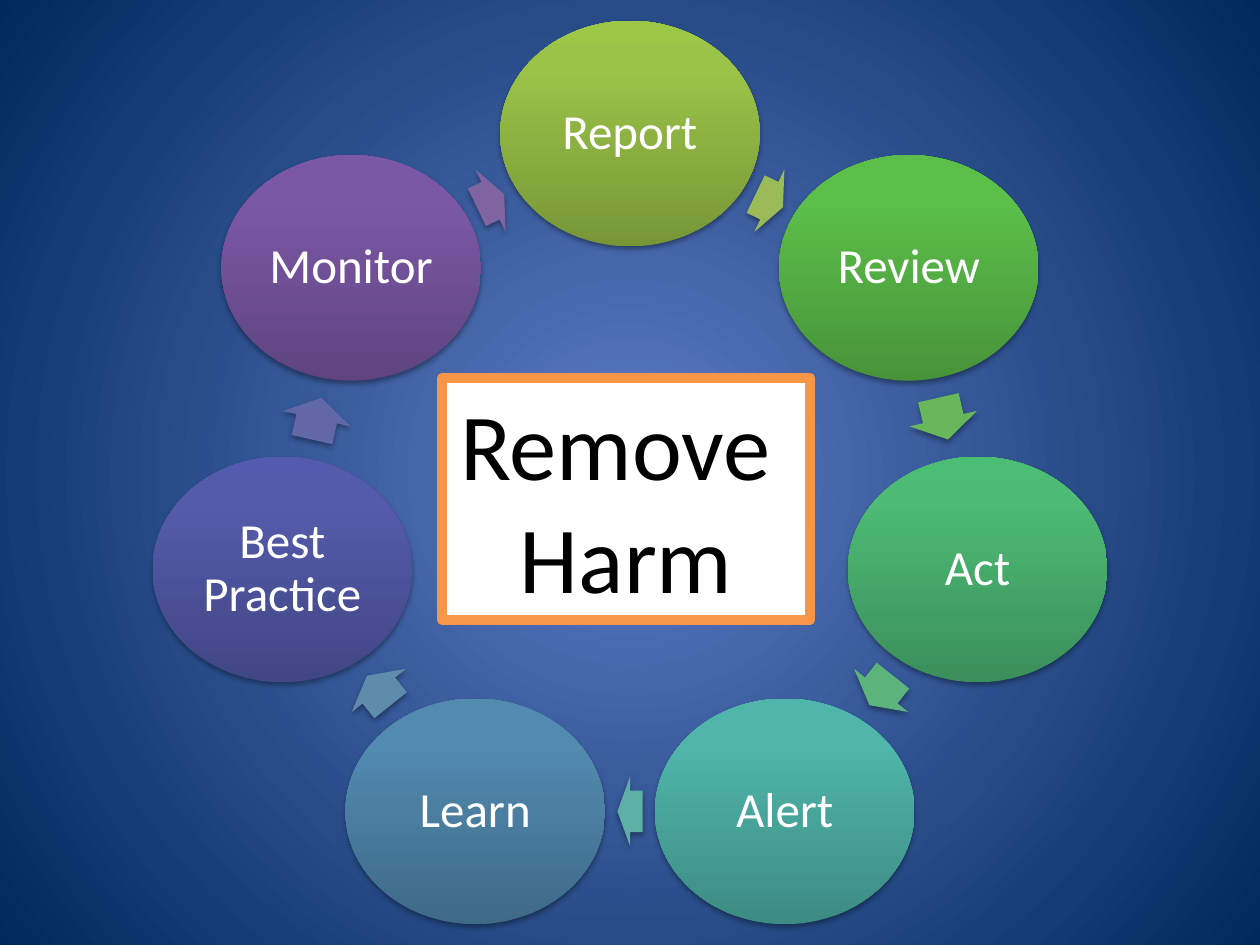
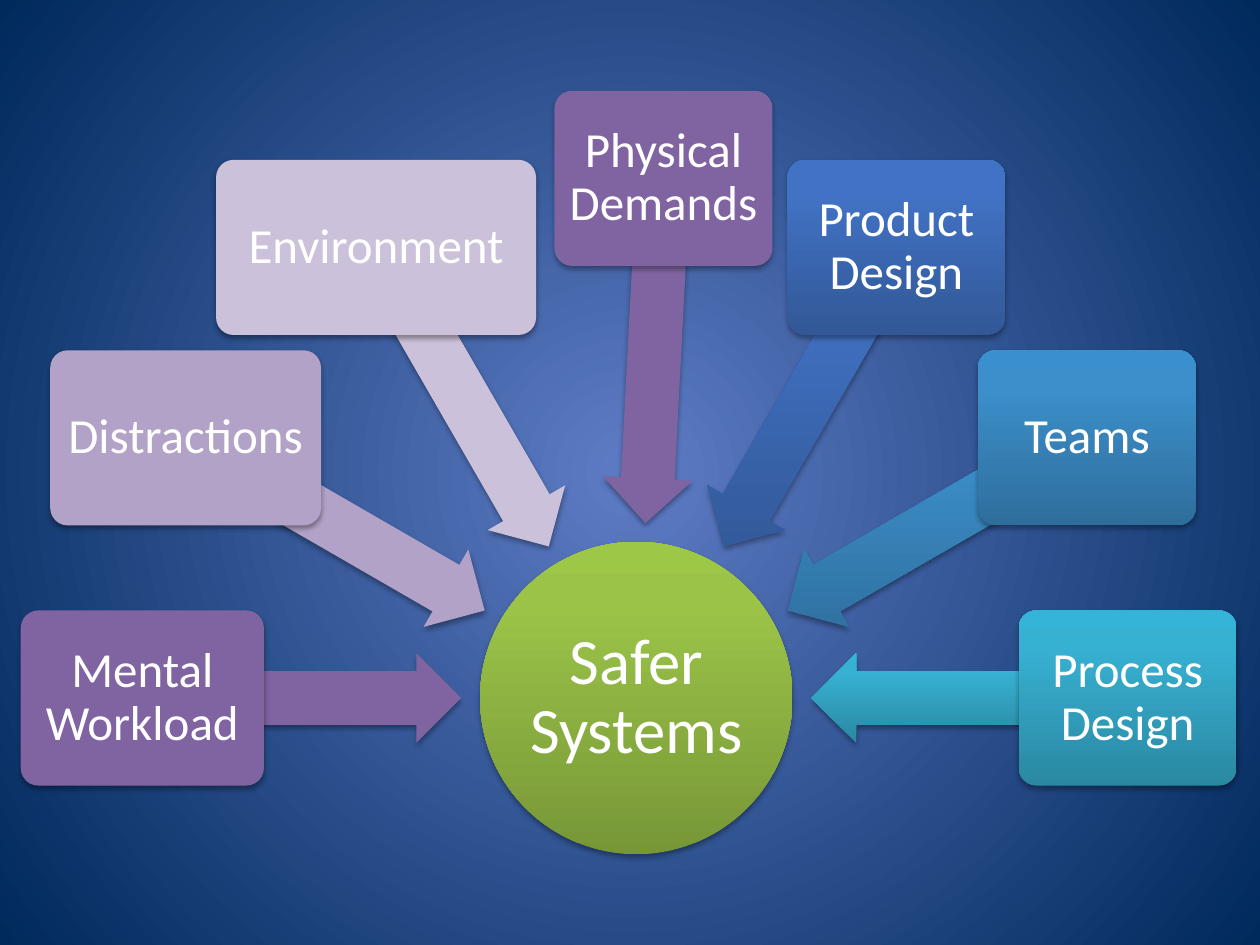
from dataclasses import dataclass
from math import cos, radians, sin

from lxml import etree
from pptx import Presentation
from pptx.dml.color import RGBColor
from pptx.enum import shapes, text
from pptx.oxml import ns
from pptx.util import Inches, Pt


@dataclass(frozen=True)
class Theme:
    font: str = "Calibri"
    label_size: int = 28
    hub_size: int = 37
    goal_size: int = 54
    light: str = "FFFFFF"
    dark: str = "000000"
    accent: str = "F79646"
    backdrop: tuple = ((0, "5E7CC5"), (100, "00295C"))
    # Three-stop fills, from the bottom edge to the top edge
    lime: tuple = ((0, "779737"), (80, "9BC348"), (100, "9DC746"))
    green: tuple = ((0, "479339"), (80, "5CBF4A"), (100, "5BC249"))
    jade: tuple = ((0, "3B8F5A"), (80, "4DBA75"), (100, "4BBD75"))
    teal: tuple = ((0, "3D8B83"), (80, "50B5AA"), (100, "4EB8AC"))
    steel: tuple = ((0, "3F6A88"), (80, "528AB0"), (100, "518BB3"))
    indigo: tuple = ((0, "414684"), (80, "555BAB"), (100, "545AAE"))
    violet: tuple = ((0, "5F4480"), (80, "7B58A6"), (100, "7C57A8"))
    blue: tuple = ((0, "325897"), (80, "4172C4"), (100, "3F72C7"))
    azure: tuple = ((0, "2E6E9C"), (80, "3C8FCB"), (100, "3A90CE"))
    cyan: tuple = ((0, "2A88A2"), (80, "37B1D2"), (100, "34B4D6"))
    purple: str = "8064A2"
    lilac: str = "B3A2C7"
    mist: str = "CCC1DA"


THEME = Theme()
KIND = shapes.MSO_SHAPE

# Label, circle fill, fill and length of the arrow to the next step
STEPS = [
    ("Report", THEME.lime, "9BBB59", 0.24),
    ("Review", THEME.green, "69B75B", 0.34),
    ("Act", THEME.jade, "5CB37C", 0.3),
    ("Alert", THEME.teal, "5EAFA6", 0.2),
    ("Learn", THEME.steel, "608CAB", 0.3),
    ("Best Practice", THEME.indigo, "6267A6", 0.34),
    ("Monitor", THEME.violet, "8064A2", 0.24),
]

# Label, clockwise angle from the right, distance from the hub, width, fill
FACTORS = [
    ("Mental Workload", 180, 3.92, 1.93, THEME.purple),
    ("Distractions", 210, 4.13, 2.15, THEME.lilac),
    ("Environment", 240, 4.13, 2.54, THEME.mist),
    ("Physical Demands", 273, 4.13, 1.73, THEME.purple),
    ("Product Design", 300, 4.13, 1.73, THEME.blue),
    ("Teams", 330, 4.13, 1.73, THEME.azure),
    ("Process Design", 0, 3.9, 1.73, THEME.cyan),
]


def add_xml(parent, tag, **attributes):
    child = etree.SubElement(parent, ns.qn(tag))
    for name, value in attributes.items():
        child.set(name, str(value))
    return child


def paint_gradient(owner, fill, stops, radial=False):
    """Fill with colour stops: upwards, or outwards from the centre."""
    fill.gradient()
    gradient = owner.element.find(".//" + ns.qn("a:gradFill"))
    gradient.clear()
    gradient.set("rotWithShape", "0")
    stop_list = add_xml(gradient, "a:gsLst")
    for percent, color in stops:
        stop = add_xml(stop_list, "a:gs", pos=percent * 1000)
        add_xml(stop, "a:srgbClr", val=color)
    if radial:
        path = add_xml(gradient, "a:path", path="circle")
        add_xml(path, "a:fillToRect", l=50000, t=50000, r=50000, b=50000)
    else:
        add_xml(gradient, "a:lin", ang=270 * 60000, scaled=0)


def cast_shadow(shape):
    shape.shadow.inherit = False
    effects = shape.element.spPr.find(ns.qn("a:effectLst"))
    shadow = add_xml(effects, "a:outerShdw", blurRad=Pt(3.1), dist=Pt(1.8),
                     dir=90 * 60000, rotWithShape=0)
    color = add_xml(shadow, "a:srgbClr", val=THEME.dark)
    add_xml(color, "a:alpha", val=35000)


def write(shape, *lines, size=THEME.label_size, color=THEME.light,
          spacing=0.9, inset=None, wrap=True):
    frame = shape.text_frame
    frame.word_wrap = wrap
    frame.vertical_anchor = text.MSO_ANCHOR.MIDDLE
    if inset is not None:
        frame.margin_left = frame.margin_right = Inches(inset)
        frame.margin_top = frame.margin_bottom = Inches(inset)
    for index, line in enumerate(lines):
        paragraph = frame.add_paragraph() if index else frame.paragraphs[0]
        paragraph.alignment = text.PP_ALIGN.CENTER
        paragraph.line_spacing = spacing
        run = paragraph.add_run()
        run.text = line
        run.font.name = THEME.font
        run.font.size = Pt(size)
        run.font.color.rgb = RGBColor.from_string(color)


def add_part(slide, kind, center, size, fill, rotation=0, adjust=()):
    """Add a shadowed shape around its centre point."""
    (x, y), (width, height) = center, size
    part = slide.shapes.add_shape(kind, Inches(x - width / 2), Inches(y - height / 2),
                                  Inches(width), Inches(height))
    part.rotation = rotation
    for index, value in enumerate(adjust):
        part.adjustments[index] = value
    if isinstance(fill, str):
        part.fill.solid()
        part.fill.fore_color.rgb = RGBColor.from_string(fill)
    else:
        paint_gradient(part, part.fill, fill)
    part.line.fill.background()
    cast_shadow(part)
    return part


def polar(center, radius, angle):
    """Point at a clockwise angle from the right of the centre."""
    turn = radians(angle)
    return center[0] + radius * cos(turn), center[1] + radius * sin(turn)


def add_cycle(slide, center, radius, steps):
    step_angle = 360 / len(steps)
    arrow_radius = radius * cos(radians(step_angle / 2))
    for index, (label, fill, arrow_fill, arrow_length) in enumerate(steps):
        angle = index * step_angle
        circle = add_part(slide, KIND.OVAL, polar(center, radius, angle - 90),
                          (2.06, 1.79), fill)
        write(circle, label, inset=0.04)
        # Arrow halfway to the next circle
        heading = angle + step_angle / 2
        add_part(slide, KIND.RIGHT_ARROW, polar(center, arrow_radius, heading - 90),
                 (arrow_length, 0.55), arrow_fill, heading, (0.6, 0.5))


def add_goal(slide, left, top, width, height):
    goal = slide.shapes.add_textbox(Inches(left), Inches(top), Inches(width), Inches(height))
    goal.fill.solid()
    goal.fill.fore_color.rgb = RGBColor.from_string(THEME.light)
    goal.line.color.rgb = RGBColor.from_string(THEME.accent)
    goal.line.width = Pt(6)
    write(goal, "Remove ", "Harm", size=THEME.goal_size, color=THEME.dark,
          spacing=1.0, wrap=False)


def add_hub(slide, center, factors):
    hub = add_part(slide, KIND.OVAL, center, (2.48, 2.48), THEME.lime)
    write(hub, "Safer Systems", size=THEME.hub_size, inset=0.03)
    arrow_tip = 1.39
    for label, angle, distance, width, fill in factors:
        # Arrow from the middle of the box to just outside the hub
        add_part(slide, KIND.LEFT_ARROW, polar(center, (arrow_tip + distance) / 2, angle),
                 (distance - arrow_tip, 0.71), fill, angle, (0.6, 0.5))
        box = add_part(slide, KIND.ROUNDED_RECTANGLE, polar(center, distance, angle),
                       (width, 1.39), fill, adjust=(0.1,))
        write(box, label, inset=0.06)


def main():
    prs = Presentation()
    prs.slide_width, prs.slide_height = Inches(10), Inches(7.5)
    master = prs.slide_master
    paint_gradient(master, master.background.fill, THEME.backdrop, radial=True)
    blank = prs.slide_layouts[6]

    # Reporting cycle
    cycle_slide = prs.slides.add_slide(blank)
    add_cycle(cycle_slide, (5, 3.89), 2.83, STEPS)
    add_goal(cycle_slide, 3.51, 3, 2.92, 1.92)

    # Factors behind safer systems
    factors_slide = prs.slides.add_slide(blank)
    add_hub(factors_slide, (5.05, 5.54), FACTORS)

    prs.save("out.pptx")


if __name__ == "__main__":
    main()
